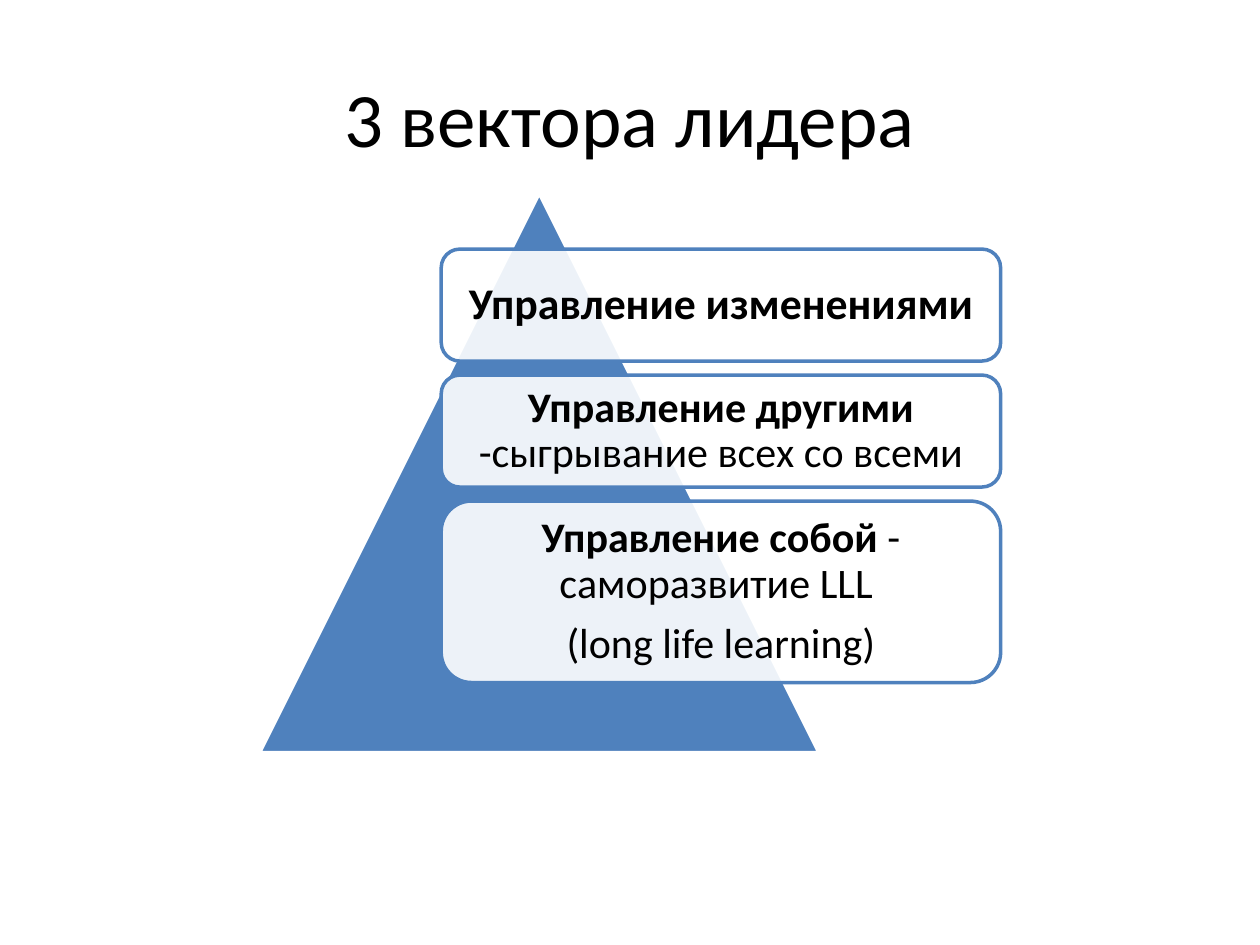
from lxml import etree
from pptx import Presentation
from pptx.dml.color import RGBColor
from pptx.enum.shapes import MSO_SHAPE
from pptx.enum.text import MSO_ANCHOR, PP_ALIGN
from pptx.oxml.ns import qn
from pptx.util import Pt

TRIANGLE = MSO_SHAPE.ISOSCELES_TRIANGLE
ROUNDED = MSO_SHAPE.ROUNDED_RECTANGLE
MIDDLE = MSO_ANCHOR.MIDDLE
CENTER = PP_ALIGN.CENTER

BLUE = RGBColor(0x4F, 0x81, 0xBD)
WHITE = RGBColor(0xFF, 0xFF, 0xFF)
BLACK = RGBColor(0, 0, 0)
FONT = "Calibri"

CARD_GAP = 8
CARDS = [
    (64, 25, [[("Управление изменениями", True)]]),
    (64, 24, [[("Управление другими ", True), ("-сыгрывание всех со всеми", False)]]),
    (103.7, 24, [
        [("Управление собой ", True), ("- саморазвитие LLL ", False)],
        [("(long life learning)", False)],
    ]),
]


def add_run(paragraph, text, size, bold=False):
    run = paragraph.add_run()
    run.text = text
    run.font.name = FONT
    run.font.size = Pt(size)
    run.font.bold = bold
    run.font.color.rgb = BLACK


def set_frame(text_frame, horizontal, vertical):
    text_frame.word_wrap = True
    text_frame.vertical_anchor = MIDDLE
    text_frame.margin_left = text_frame.margin_right = Pt(horizontal)
    text_frame.margin_top = text_frame.margin_bottom = Pt(vertical)


def add_filled_shape(shapes, kind, box, fill, line):
    shape = shapes.add_shape(kind, *(Pt(length) for length in box))
    shape.shadow.inherit = False
    shape.fill.solid()
    shape.fill.fore_color.rgb = fill
    shape.line.color.rgb = line
    shape.line.width = Pt(2)
    return shape


def set_opacity(shape, percent):
    color = shape.fill._xPr.find(qn("a:solidFill"))[0]
    etree.SubElement(color, qn("a:alpha")).set("val", str(percent * 1000))


def add_title(slide, box, text):
    title = slide.shapes.add_textbox(*(Pt(length) for length in box))
    set_frame(title.text_frame, 7.2, 3.6)
    paragraph = title.text_frame.paragraphs[0]
    paragraph.alignment = CENTER
    add_run(paragraph, text, 44)


def add_card(shapes, box, size, paragraphs):
    card = add_filled_shape(shapes, ROUNDED, box, WHITE, BLUE)
    set_opacity(card, 90)
    text_frame = card.text_frame
    set_frame(text_frame, 7.2, 7.2)
    for index, runs in enumerate(paragraphs):
        paragraph = text_frame.add_paragraph() if index else text_frame.paragraphs[0]
        paragraph.alignment = CENTER
        paragraph.line_spacing = 0.9
        paragraph.space_before = Pt(8.4 if index else 0)
        for text, bold in runs:
            add_run(paragraph, text, size, bold)


def add_pyramid(slide, box):
    left, top, width, height = box
    shapes = slide.shapes.add_group_shape().shapes
    add_filled_shape(shapes, TRIANGLE, box, BLUE, WHITE)
    card_width = width
    card_left = left + width / 2 - 56
    card_top = top + height / 10
    for card_height, size, paragraphs in CARDS:
        add_card(shapes, (card_left, card_top, card_width, card_height), size, paragraphs)
        card_top += card_height + CARD_GAP


def main():
    presentation = Presentation()
    presentation.slide_width = Pt(720)
    presentation.slide_height = Pt(540)
    slide = presentation.slides.add_slide(presentation.slide_layouts[6])
    add_title(slide, (36, 21.6, 648, 90), "3 вектора лидера")
    add_pyramid(slide, (148.3, 110.4, 319.7, 319.7))
    presentation.save("out.pptx")


if __name__ == "__main__":
    main()
